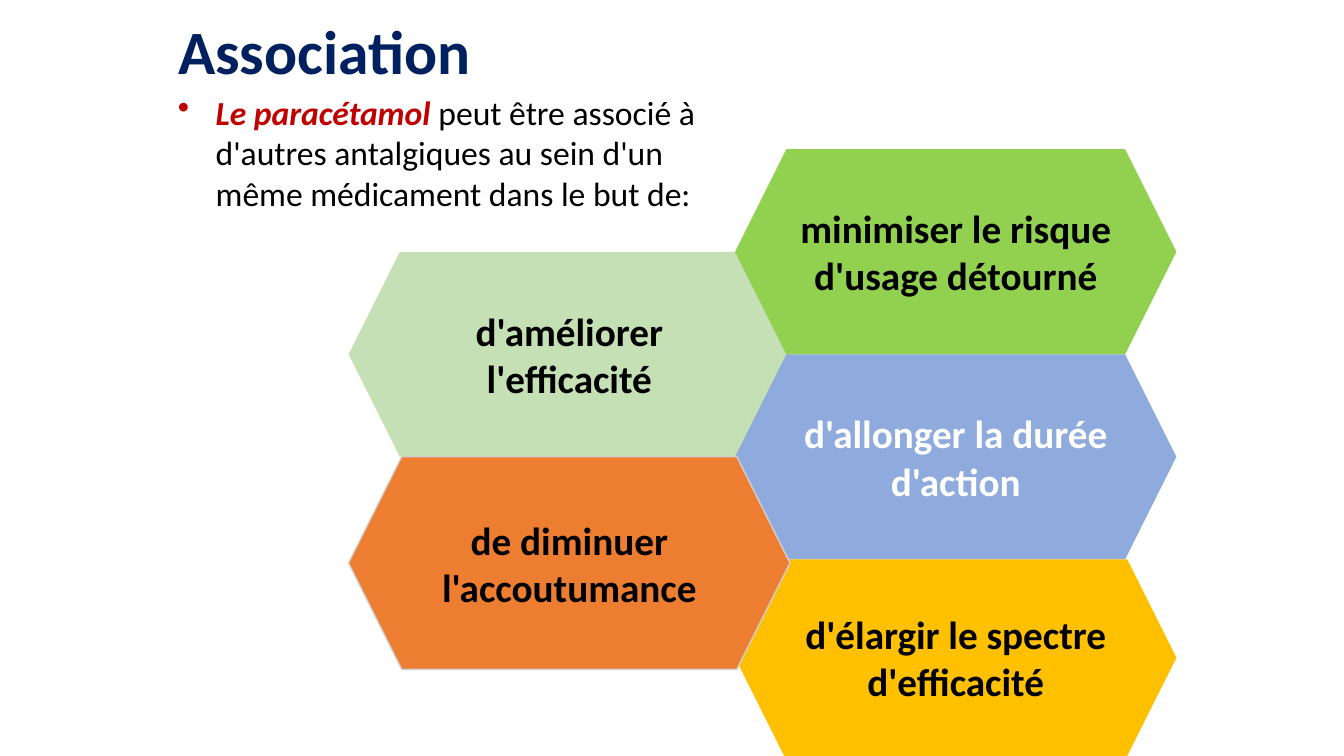
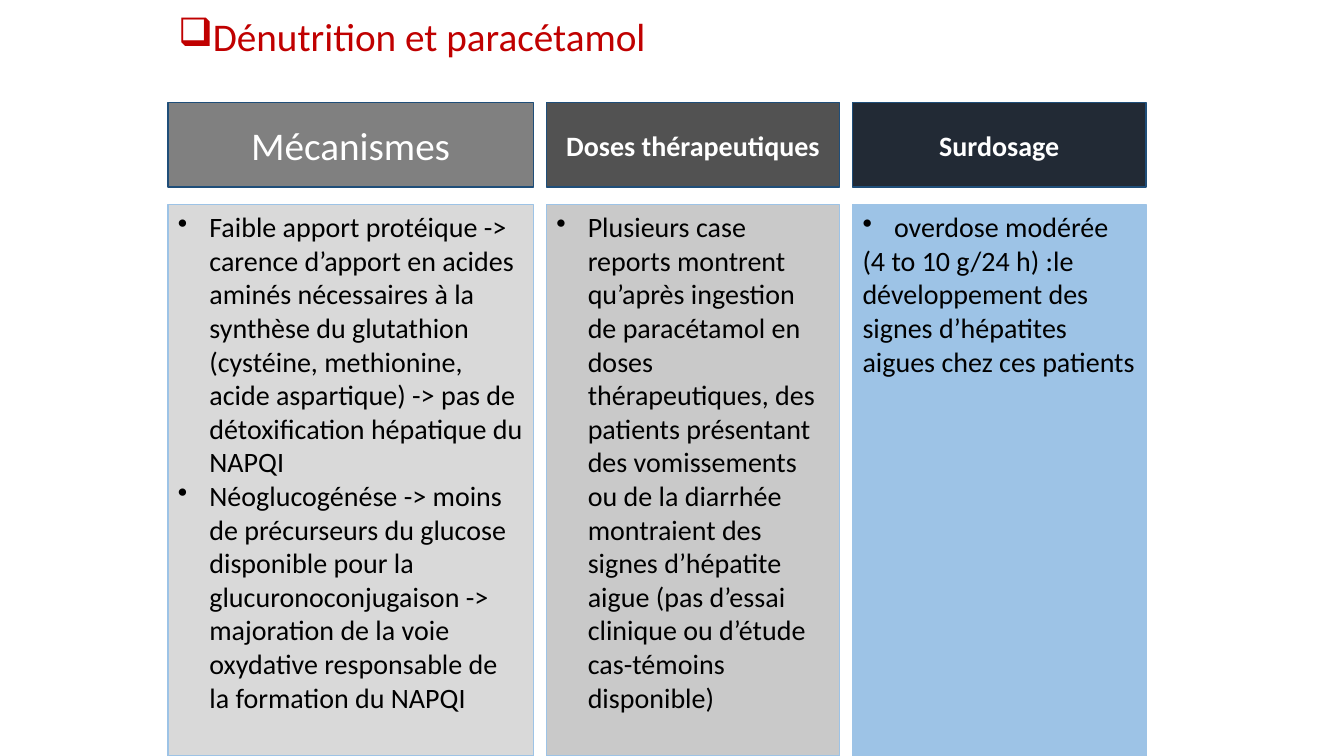
from pptx import Presentation
from pptx.dml.color import RGBColor
from pptx.enum.shapes import MSO_SHAPE as Preset
from pptx.enum.text import MSO_ANCHOR as Anchor, MSO_AUTO_SIZE as AutoSize, PP_ALIGN as Align
from pptx.oxml.ns import qn
from pptx.util import Pt
from lxml.etree import SubElement

FONT = "Calibri"
BLACK = RGBColor(0x00, 0x00, 0x00)
WHITE = RGBColor(0xFF, 0xFF, 0xFF)
NAVY = RGBColor(0x00, 0x20, 0x60)
RED = RGBColor(0xC0, 0x00, 0x00)
PALE_GREEN = RGBColor(0xC5, 0xE0, 0xB4)
GREEN = RGBColor(0x92, 0xD0, 0x50)
BLUE = RGBColor(0x8F, 0xAA, 0xDC)
GOLD = RGBColor(0xFF, 0xC0, 0x00)
ORANGE = RGBColor(0xED, 0x7D, 0x31)
SILVER = RGBColor(0xD0, 0xCE, 0xCE)
SKY = RGBColor(0x9D, 0xC3, 0xE6)
DEEP_BLUE = RGBColor(0x1F, 0x4E, 0x79)
GREY = RGBColor(0x80, 0x80, 0x80)
DARK_GREY = RGBColor(0x52, 0x52, 0x52)
INK = RGBColor(0x22, 0x2A, 0x35)
LIGHT_GREY = RGBColor(0xD9, 0xD9, 0xD9)
MID_GREY = RGBColor(0xC9, 0xC9, 0xC9)

# Content
LEFT = 120
INTRO = [
    ("Le paracétamol ", dict(color=RED, bold=True, italic=True)),
    ("peut être associé à d'autres antalgiques au sein d'un même médicament "
     "dans le but de:", {}),
]
# Hexagons from back to front: column, height, text, fill, text colour, line
HEXAGONS = [
    ("left", 146.2, "d'améliorer l'efficacité", PALE_GREEN, BLACK, None),
    ("right", 146.5, "minimiser le risque d'usage détourné", GREEN, BLACK, None),
    ("right", 146.5, "d'allonger la durée d'action", BLUE, WHITE, None),
    ("right", 140.4, "d'élargir le spectre d'efficacité", GOLD, BLACK, None),
    ("left", 151.9, "de diminuer l'accoutumance", ORANGE, BLACK, SILVER),
]
HEXAGON_LEFT = {"left": 249, "right": 525}
HEXAGON_WIDTH = 315.3

# Columns: width, heading, heading format, heading fill, body fill, (bulleted, text)
COLUMNS = [
    (261, "Mécanismes", dict(size=28), GREY, LIGHT_GREY, [
        (True, "Faible apport protéique -> carence d’apport en acides aminés "
               "nécessaires à la synthèse du glutathion (cystéine, methionine, acide "
               "aspartique) -> pas de détoxification hépatique du NAPQI"),
        (True, "Néoglucogénése -> moins de précurseurs du glucose disponible pour la "
               "glucuronoconjugaison -> majoration de la voie oxydative responsable "
               "de la formation du NAPQI")]),
    (209.5, "Doses thérapeutiques", dict(size=20, bold=True), DARK_GREY, MID_GREY, [
        (True, "Plusieurs case reports montrent qu’après ingestion de paracétamol en "
               "doses thérapeutiques, des patients présentant des vomissements ou de "
               "la diarrhée montraient des signes d’hépatite aigue (pas d’essai "
               "clinique ou d’étude cas-témoins disponible)")]),
    (209.5, "Surdosage", dict(size=20, bold=True), INK, SKY, [
        (True, "overdose modérée"),
        (False, "(4 to 10 g/24 h) :le développement des signes d’hépatites aigues "
                "chez ces patients")]),
]
COLUMN_GAP = 9.25


def write(paragraph, text, size=20, color=BLACK, bold=False, italic=False,
          align=Align.LEFT, bullet=None, indent=0, spacing=None):
    """Fill a paragraph with a string, or with (string, format) pairs."""
    paragraph.alignment = align
    if bullet:
        properties = paragraph._p.get_or_add_pPr()
        properties.set("marL", str(Pt(indent)))
        properties.set("indent", str(-Pt(indent)))
        SubElement(properties, qn("a:buChar")).set("char", bullet)
    if spacing:
        paragraph.line_spacing = spacing
    for part, extra in [(text, {})] if isinstance(text, str) else text:
        run = paragraph.add_run()
        run.text = part
        font = run.font
        font.name, font.size = FONT, Pt(size)
        font.bold = extra.get("bold", bold)
        font.italic = extra.get("italic", italic)
        font.color.rgb = extra.get("color", color)


def add_titled_slide(presentation, title, height, **text_format):
    slide = presentation.slides.add_slide(presentation.slide_layouts[5])
    shape = slide.shapes.title
    shape.left, shape.top, shape.width, shape.height = Pt(LEFT), Pt(0), Pt(720), Pt(height)
    frame = shape.text_frame
    frame.auto_size, frame.vertical_anchor = AutoSize.NONE, Anchor.MIDDLE
    write(frame.paragraphs[0], title, spacing=0.9, **text_format)
    return slide


def add_panel(slide, preset, box, fill, line=None, anchor=Anchor.MIDDLE):
    shape = slide.shapes.add_shape(preset, *map(Pt, box))
    shape.shadow.inherit = False
    shape.fill.solid()
    shape.fill.fore_color.rgb = fill
    if line is None:
        shape.line.fill.background()
    else:
        shape.line.color.rgb = line
        shape.line.width = Pt(1)
    frame = shape.text_frame
    frame.word_wrap, frame.vertical_anchor = True, anchor
    return frame


def build_association(presentation):
    slide = add_titled_slide(presentation, "Association", 78.5,
                             size=44, color=NAVY, bold=True)
    frame = slide.shapes.add_textbox(Pt(LEFT), Pt(62), Pt(416), Pt(118)).text_frame
    frame.word_wrap = True
    write(frame.paragraphs[0], INTRO, size=24, bullet="•", indent=27)

    # Each column stacks its hexagons without a gap
    next_top = {"left": 180, "right": 106.6}
    for column, height, text, fill, color, line in HEXAGONS:
        box = (HEXAGON_LEFT[column], next_top[column], HEXAGON_WIDTH, height)
        frame = add_panel(slide, Preset.HEXAGON, box, fill, line)
        write(frame.paragraphs[0], text, size=28, color=color, bold=True,
              align=Align.CENTER)
        next_top[column] += height


def build_malnutrition(presentation):
    slide = add_titled_slide(presentation, "Dénutrition et paracétamol", 56,
                             size=28, color=RED, bullet="❑")
    left = LEFT
    for width, heading, heading_format, heading_fill, body_fill, items in COLUMNS:
        # Body
        frame = add_panel(slide, Preset.RECTANGLE, (left, 146.2, width, 393.8),
                          body_fill, SKY, Anchor.TOP)
        for number, (bulleted, text) in enumerate(items):
            paragraph = frame.add_paragraph() if number else frame.paragraphs[0]
            write(paragraph, text, bullet="•" if bulleted else None, indent=22.5)
        # Heading
        frame = add_panel(slide, Preset.RECTANGLE, (left, 73.2, width, 60.5),
                          heading_fill, DEEP_BLUE)
        write(frame.paragraphs[0], heading, color=WHITE, align=Align.CENTER,
              **heading_format)
        left += width + COLUMN_GAP


def main():
    presentation = Presentation()
    presentation.slide_width, presentation.slide_height = Pt(960), Pt(540)
    build_association(presentation)
    build_malnutrition(presentation)
    presentation.save("out.pptx")


if __name__ == "__main__":
    main()
